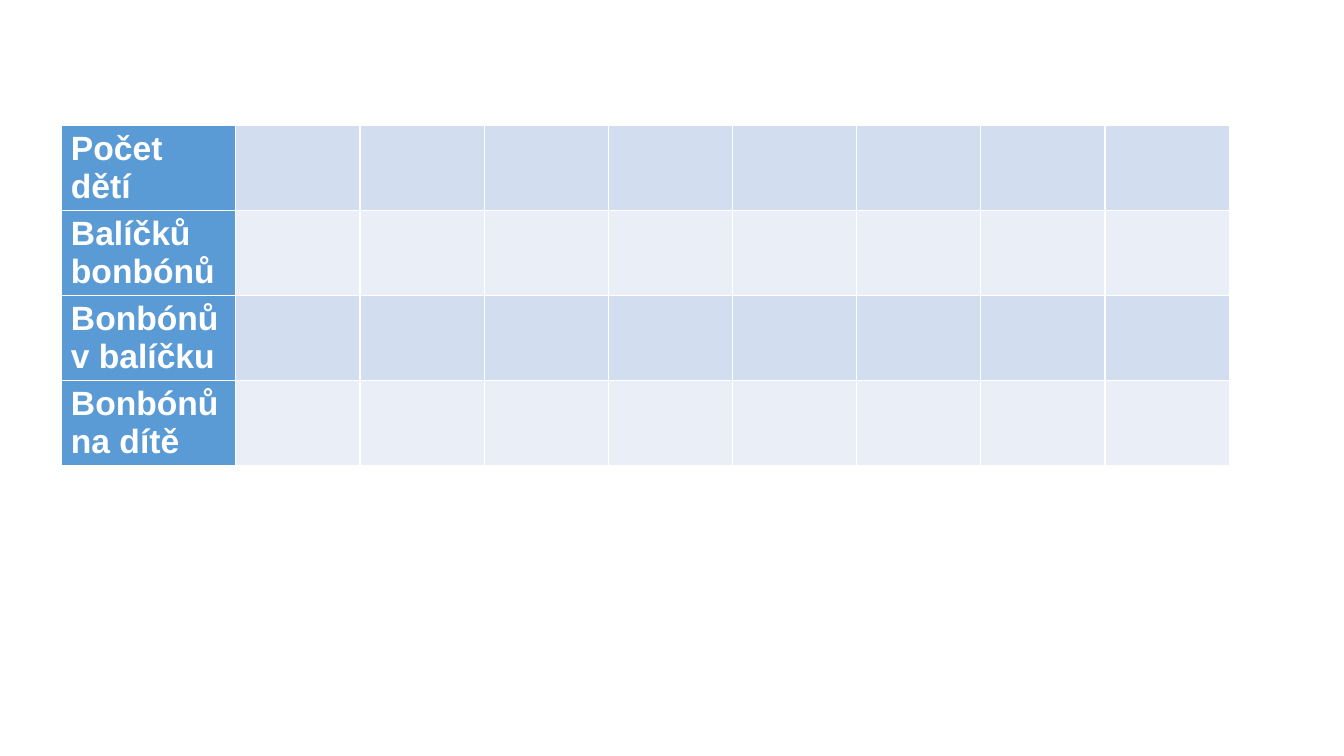
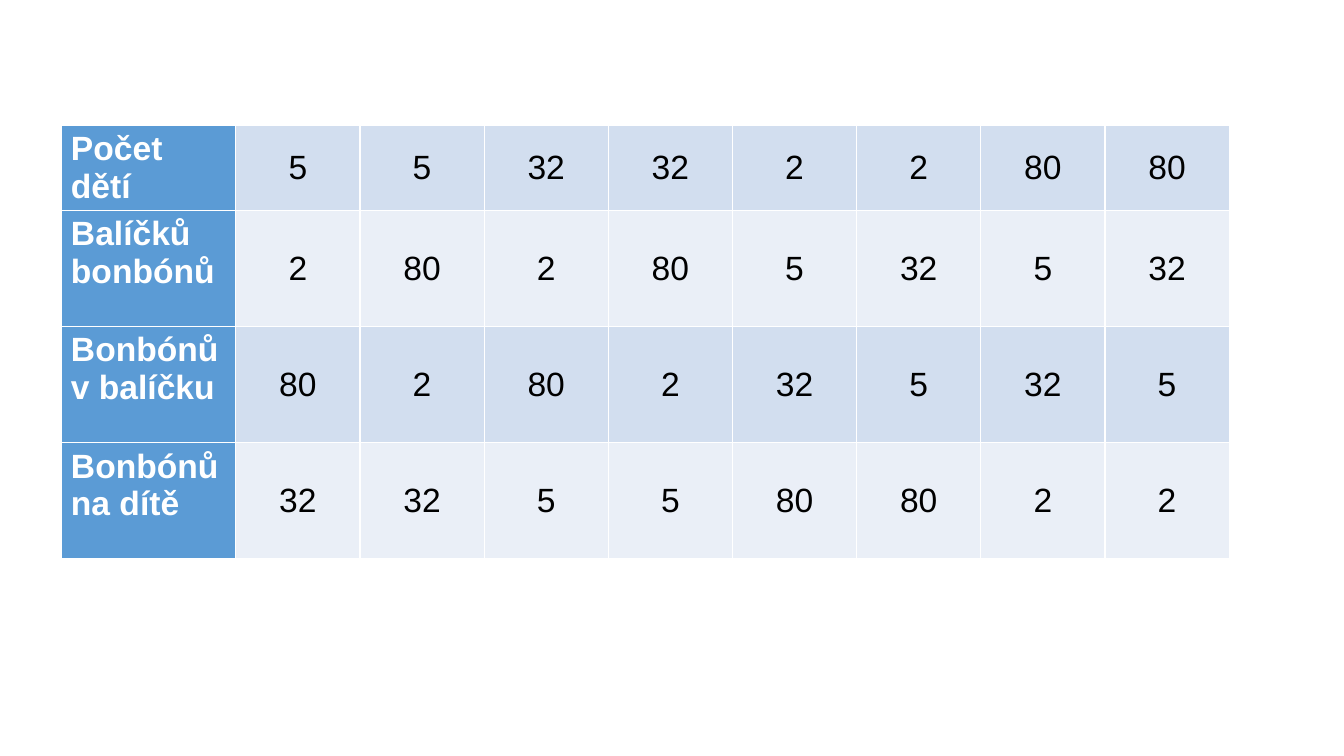
"""Builds two slides about sharing sweets: an empty table and the same table filled in."""
from lxml.etree import SubElement
from pptx import Presentation
from pptx.dml.color import RGBColor as Color
from pptx.enum.text import MSO_ANCHOR as Anchor, PP_ALIGN as Align
from pptx.oxml.ns import qn
from pptx.util import Pt

WHITE = Color(0xFF, 0xFF, 0xFF)
BLACK = Color(0x00, 0x00, 0x00)
BLUE = Color(0x5B, 0x9B, 0xD5)
BANDS = (Color(0xD2, 0xDE, 0xEF), Color(0xEA, 0xEF, 0xF7))

LABELS = ("Počet dětí ", "Balíčků bonbónů", "Bonbónů v balíčku", "Bonbónů na dítě")
SOLUTIONS = (
    (5, 5, 32, 32, 2, 2, 80, 80),
    (2, 80, 2, 80, 5, 32, 5, 32),
    (80, 2, 80, 2, 32, 5, 32, 5),
    (32, 32, 5, 5, 80, 80, 2, 2),
)
VALUE_COUNT = len(SOLUTIONS[0])
BLANKS = (("",) * VALUE_COUNT,) * len(LABELS)
SLIDES = (
    {"values": BLANKS, "heights": (60.7,) * 4},
    {"values": SOLUTIONS, "heights": (60.7, 83, 83, 83)},
)

SLIDE_SIZE = (960, 540)
TABLE_LEFT, TABLE_TOP = 43.5, 89.5
COLUMN_WIDTHS = (124.9,) + (88.7,) * VALUE_COUNT
BORDER_WIDTH = 1

TEXT_FORMAT = {"name": "Arial", "size": Pt(24)}
LABEL_FORMAT = {**TEXT_FORMAT, "bold": True}
VALUE_FORMAT = {**TEXT_FORMAT, "bold": False}


def add_borders(cell):
    properties = cell._tc.get_or_add_tcPr()
    for index, side in enumerate(("lnL", "lnR", "lnT", "lnB")):
        line = SubElement(properties, qn(f"a:{side}"), w=str(Pt(BORDER_WIDTH)))
        fill = SubElement(line, qn("a:solidFill"))
        SubElement(fill, qn("a:srgbClr"), val=str(WHITE))
        properties.insert(index, line)


def fill_cell(cell, text, background, color, font_format):
    cell.fill.solid()
    cell.fill.fore_color.rgb = background
    add_borders(cell)
    if text:
        span = cell.text_frame.paragraphs[0].add_run()
        span.text = text
        span.font.color.rgb = color
        for name, value in font_format.items():
            setattr(span.font, name, value)


def add_sweets_table(page, values, heights):
    frame = page.shapes.add_table(
        len(LABELS), len(COLUMN_WIDTHS), Pt(TABLE_LEFT), Pt(TABLE_TOP),
        Pt(sum(COLUMN_WIDTHS)), Pt(sum(heights)))
    table = frame.table
    table.first_row = False
    table.first_col = True
    for column, width in zip(table.columns, COLUMN_WIDTHS):
        column.width = Pt(width)
    for index, (label, numbers) in enumerate(zip(LABELS, values)):
        table.rows[index].height = Pt(heights[index])
        fill_cell(table.cell(index, 0), label, BLUE, WHITE, LABEL_FORMAT)
        for position, number in enumerate(numbers, start=1):
            cell = table.cell(index, position)
            fill_cell(cell, str(number), BANDS[index % 2], BLACK, VALUE_FORMAT)
            cell.vertical_anchor = Anchor.MIDDLE
            cell.text_frame.paragraphs[0].alignment = Align.CENTER


def main():
    deck = Presentation()
    deck.slide_width, deck.slide_height = map(Pt, SLIDE_SIZE)
    blank_layout = deck.slide_layouts.get_by_name("Blank")
    for content in SLIDES:
        add_sweets_table(deck.slides.add_slide(blank_layout), **content)
    deck.save("out.pptx")


if __name__ == "__main__":
    main()
